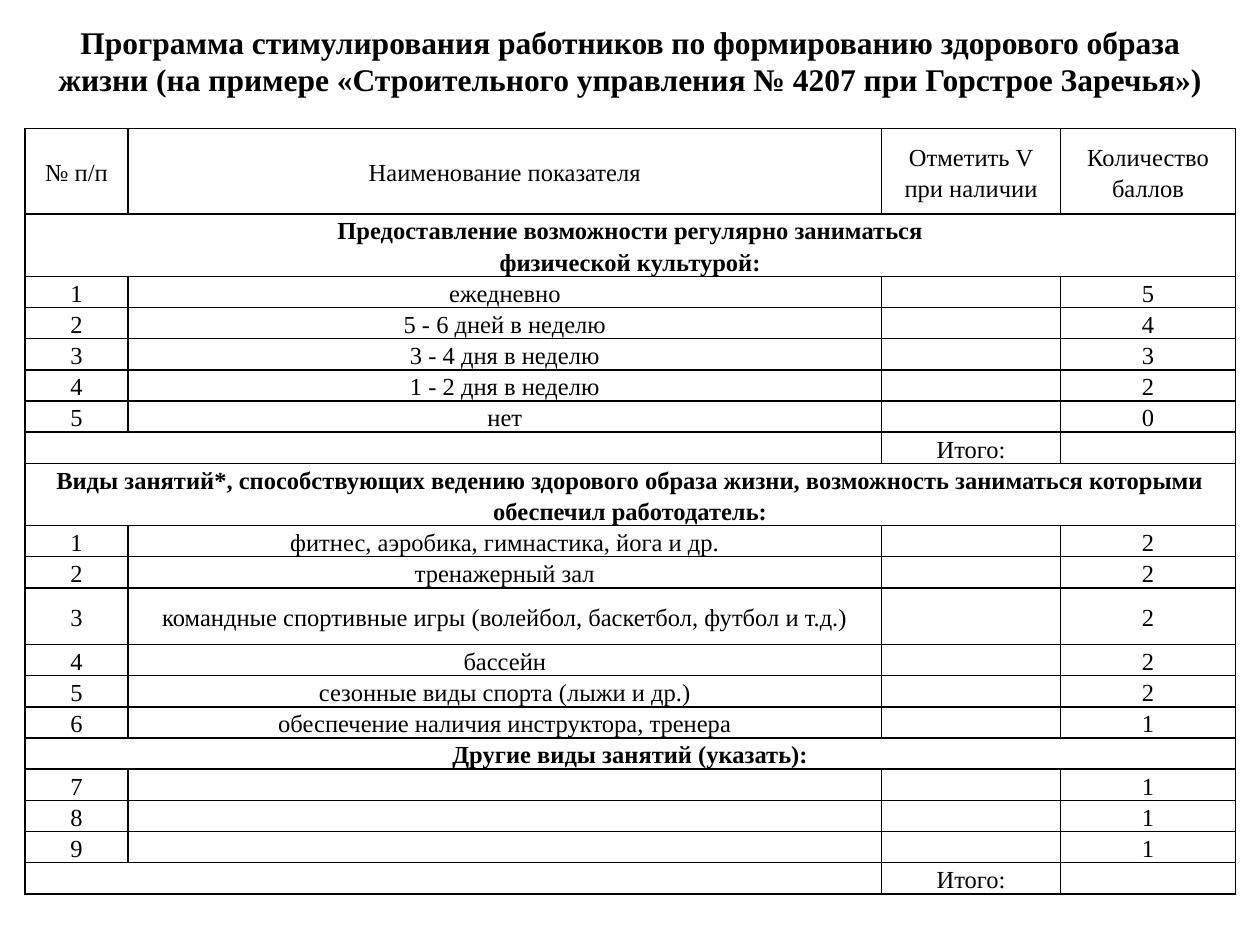
import dataclasses
import typing

import lxml.etree
import pptx
import pptx.dml.color
import pptx.enum.text
import pptx.oxml
import pptx.oxml.ns
import pptx.util

Pt = pptx.util.Pt
MID = pptx.enum.text.PP_ALIGN.CENTER
FONT = "Times New Roman"
INK = {"text": "000000", "line": "000000"}
COLS = (59.04, 430.56, 102.24, 100.08)
HEAD, LOW, HIGH = 48.96, 16.56, 32.4
TITLE = (
    "Программа стимулирования работников по формированию здорового образа "
    "жизни (на примере «Строительного управления № 4207 при Горстрое Заречья»)"
)
TEXT = {"name": FONT, "size": Pt(14), "bold": False}
BOLD = {**TEXT, "bold": True}
LARGE = {**BOLD, "size": Pt(18)}
CELL = {
    "margin_left": Pt(5),
    "margin_right": Pt(5),
    "margin_top": 0,
    "margin_bottom": 0,
    "vertical_anchor": pptx.enum.text.MSO_ANCHOR.MIDDLE,
}


@dataclasses.dataclass
class Row:
    """A table row; span counts the cells merged from the left."""

    texts: tuple[str, ...]
    tall: float = LOW
    span: int = 1


def item(num: int, name: str, score: int, tall: float = LOW) -> Row:
    return Row((str(num), name, "", str(score)), tall)


def band(text: str, tall: float = LOW) -> Row:
    return Row((text, "", "", ""), tall, 4)


TOTAL = Row(("", "", "Итого:", ""), span=2)
ROWS = [
    Row(("№ п/п", "Наименование показателя", "Отметить V при наличии", "Количество баллов"), HEAD),
    band("Предоставление возможности регулярно заниматься\nфизической культурой:", HIGH),
    item(1, "ежедневно", 5),
    item(2, "5 - 6 дней в неделю", 4),
    item(3, "3 - 4 дня в неделю", 3),
    item(4, "1 - 2 дня в неделю", 2),
    item(5, "нет", 0),
    TOTAL,
    band(
        "Виды занятий*, способствующих ведению здорового образа жизни, "
        "возможность заниматься которыми обеспечил работодатель:",
        HIGH,
    ),
    item(1, "фитнес, аэробика, гимнастика, йога и др.", 2),
    item(2, "тренажерный зал", 2),
    item(3, "командные спортивные игры (волейбол, баскетбол, футбол и т.д.)", 2, HIGH),
    item(4, "бассейн", 2),
    item(5, "сезонные виды спорта (лыжи и др.)", 2),
    item(6, "обеспечение наличия инструктора, тренера", 1),
    band("Другие виды занятий (указать):"),
    *(item(num, "", 1) for num in (7, 8, 9)),
    TOTAL,
]


def apply(part: typing.Any, form: dict[str, typing.Any]) -> None:
    for key, value in form.items():
        setattr(part, key, value)


def write(frame: typing.Any, text: str, form: dict[str, typing.Any], gap: float) -> None:
    frame.text = text
    for para in frame.paragraphs:
        apply(para, {"alignment": MID, "line_spacing": gap})
        for run in para.runs:
            apply(run.font, form)
            run.font.color.rgb = pptx.dml.color.RGBColor.from_string(INK["text"])
        if not para.runs:
            # An empty cell needs its own text size, or the row grows.
            end = lxml.etree.SubElement(para._p, pptx.oxml.ns.qn("a:endParaRPr"))
            end.set("sz", str(int(form["size"].pt * 100)))


def edge(cell: typing.Any) -> None:
    """Draw a thin line on all four sides of the cell."""
    props = cell._tc.get_or_add_tcPr()
    for at, side in enumerate("LRTB"):
        line = pptx.oxml.parse_xml(
            f'<a:ln{side} {pptx.oxml.ns.nsdecls("a")} w="{Pt(1)}"><a:solidFill>'
            f'<a:srgbClr val="{INK["line"]}"/></a:solidFill></a:ln{side}>'
        )
        props.insert(at, line)


def grid(slide: typing.Any) -> None:
    high = sum(row.tall for row in ROWS)
    shape = slide.shapes.add_table(
        len(ROWS), len(COLS), Pt(14.2), Pt(73.4), Pt(sum(COLS)), Pt(high)
    )
    table = shape.table
    apply(table, {"first_row": False, "horz_banding": False})
    for col, wide in zip(table.columns, COLS):
        col.width = Pt(wide)
    for at, row in enumerate(ROWS):
        table.rows[at].height = Pt(row.tall)
        form = BOLD if row.span == len(COLS) else TEXT
        for col, text in enumerate(row.texts):
            cell = table.cell(at, col)
            apply(cell, CELL)
            write(cell.text_frame, text, form, 1.15)
            cell.fill.background()
            edge(cell)
        if row.span > 1:
            table.cell(at, 0).merge(table.cell(at, row.span - 1))


def title(slide: typing.Any) -> None:
    box = slide.shapes.add_textbox(Pt(20), Pt(9.4), Pt(680.4), Pt(49))
    frame = box.text_frame
    apply(frame, {"word_wrap": True, "auto_size": pptx.enum.text.MSO_AUTO_SIZE.SHAPE_TO_FIT_TEXT})
    write(frame, TITLE, LARGE, 1.0)


def main() -> None:
    deck = pptx.Presentation()
    apply(deck, {"slide_width": Pt(720), "slide_height": Pt(540)})
    slide = deck.slides.add_slide(deck.slide_layouts[6])
    grid(slide)
    title(slide)
    deck.save("out.pptx")


if __name__ == "__main__":
    main()
